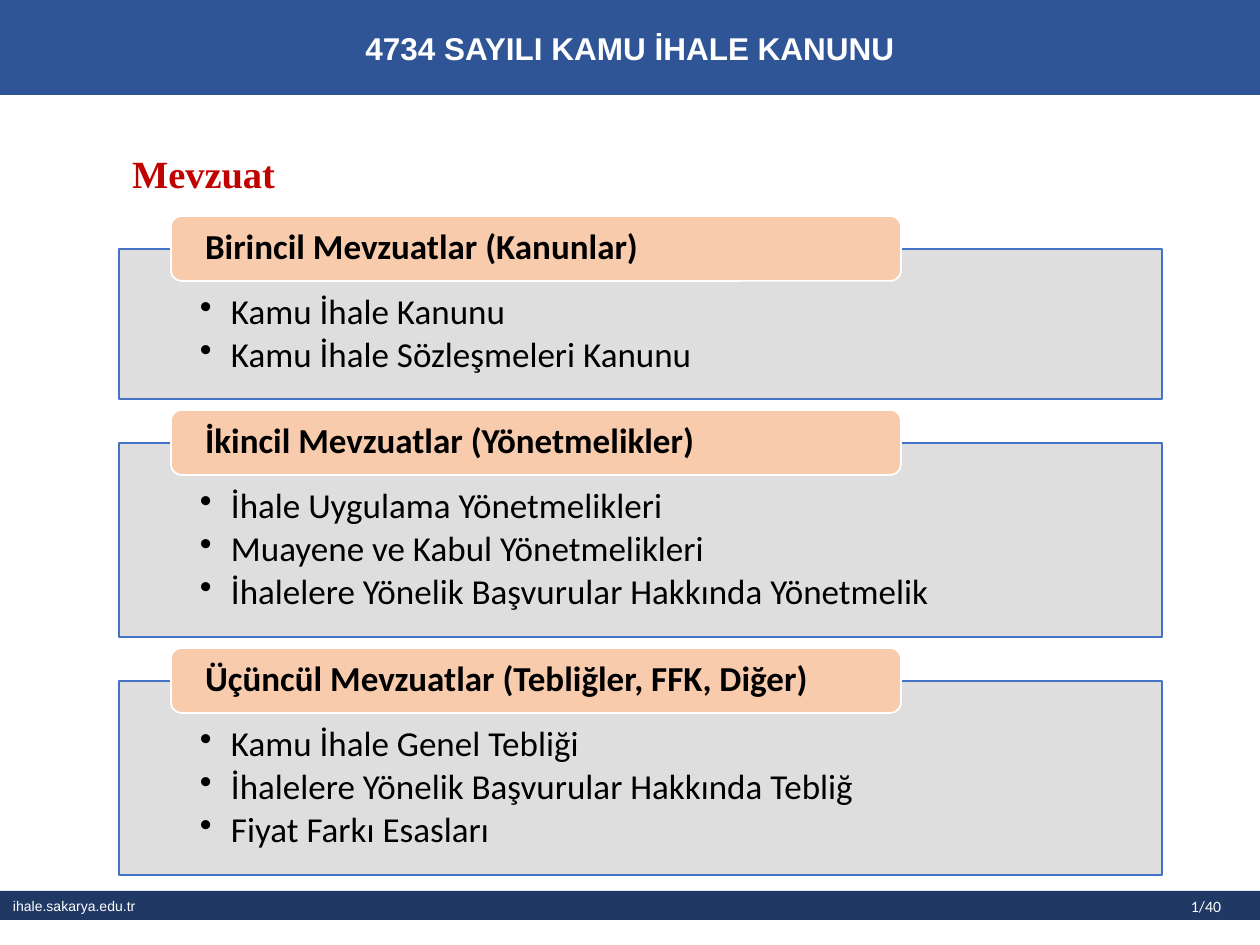
from lxml import etree
from pptx import Presentation
from pptx.dml.color import RGBColor
from pptx.enum.shapes import MSO_SHAPE
from pptx.enum.text import MSO_ANCHOR, PP_ALIGN
from pptx.oxml.ns import qn
from pptx.util import Pt

RECTANGLE = MSO_SHAPE.RECTANGLE
ROUNDED = MSO_SHAPE.ROUNDED_RECTANGLE
TOP, MIDDLE = MSO_ANCHOR.TOP, MSO_ANCHOR.MIDDLE
LEFT, CENTER = PP_ALIGN.LEFT, PP_ALIGN.CENTER

EMU_PER_PX = 914400 / 126
SLIDE_WIDTH, SLIDE_HEIGHT = 1260, 945
DEFAULT_INSETS = (13, 6, 13, 6)
COLORS = {
    "banner": "2F5597",
    "footer": "203864",
    "title": "C00300",
    "panel": "DBDBDB",
    "panel_line": "4472C4",
    "header": "F8CBAD",
    "white": "FFFFFF",
    "black": "000000",
}

SECTIONS = [
    ("Birincil Mevzuatlar (Kanunlar)",
     ["Kamu İhale Kanunu", "Kamu İhale Sözleşmeleri Kanunu"]),
    ("İkincil Mevzuatlar (Yönetmelikler)",
     ["İhale Uygulama Yönetmelikleri",
      "Muayene ve Kabul Yönetmelikleri",
      "İhalelere Yönelik Başvurular Hakkında Yönetmelik"]),
    ("Üçüncül Mevzuatlar (Tebliğler, FFK, Diğer)",
     ["Kamu İhale Genel Tebliği",
      "İhalelere Yönelik Başvurular Hakkında Tebliğ",
      "Fiyat Farkı Esasları"]),
]
SECTION_GAP = 11
HEADER_HEIGHT = 65
HEADER_RISE = 33  # how far a header stands above its panel
PANEL_PADDING = 62
ITEM_HEIGHT = 44


def px(length):
    return round(length * EMU_PER_PX)


def rgb(name):
    return RGBColor.from_string(COLORS[name])


def add_box(slide, kind, box, fill, line=None):
    shape = slide.shapes.add_shape(kind, *map(px, box))
    shape.shadow.inherit = False
    shape.fill.solid()
    shape.fill.fore_color.rgb = rgb(fill)
    if line:
        shape.line.color.rgb = rgb(line)
        shape.line.width = Pt(1)
    else:
        shape.line.fill.background()
    return shape


def set_frame(shape, anchor, insets=DEFAULT_INSETS):
    frame = shape.text_frame
    frame.word_wrap = True
    frame.vertical_anchor = anchor
    (frame.margin_left, frame.margin_top,
     frame.margin_right, frame.margin_bottom) = map(px, insets)
    return frame


def add_run(paragraph, text, font, size, color, bold=False, align=LEFT):
    paragraph.alignment = align
    run = paragraph.add_run()
    run.text = text
    run.font.name = font
    run.font.size = Pt(size)
    run.font.bold = bold
    run.font.color.rgb = rgb(color)


def set_bullet(paragraph, indent):
    properties = paragraph._p.get_or_add_pPr()
    properties.set("marL", str(px(indent)))
    properties.set("indent", str(-px(indent)))
    etree.SubElement(properties, qn("a:buChar"), char="•")


def set_opacity(shape, percent):
    color = shape.fill._xPr.find(".//" + qn("a:srgbClr"))
    etree.SubElement(color, qn("a:alpha"), val=str(percent * 1000))


def add_banner(slide, box):
    frame = set_frame(add_box(slide, RECTANGLE, box, "banner"), MIDDLE)
    add_run(frame.paragraphs[0], "4734 SAYILI KAMU İHALE KANUNU",
            "Arial", 18, "white", bold=True, align=CENTER)


def add_footer(slide, box):
    left, top, width, height = box
    bar = set_frame(add_box(slide, RECTANGLE, box, "footer"), MIDDLE)
    add_run(bar.paragraphs[0], "ihale.sakarya.edu.tr", "Arial", 8, "white")
    number_box = (left + width - 82, top, 82, height)
    number = set_frame(slide.shapes.add_textbox(*map(px, number_box)), TOP)
    add_run(number.paragraphs[0], "1/40", "Calibri", 9, "white")


def add_title(slide, box):
    frame = set_frame(slide.shapes.add_textbox(*map(px, box)), TOP)
    paragraph = frame.paragraphs[0]
    paragraph.line_spacing = 0.9
    add_run(paragraph, "Mevzuat", "Times New Roman", 22, "title", bold=True)


def add_section(slide, box, heading, items):
    """Place a bulleted panel with a header tab overlapping its top edge."""
    left, top, width, height = box
    panel_box = (left, top + HEADER_RISE, width, height - HEADER_RISE)
    panel = add_box(slide, RECTANGLE, panel_box, "panel", "panel_line")
    set_opacity(panel, 90)
    frame = set_frame(panel, TOP, (81, 45, 81, 20))
    for index, item in enumerate(items):
        paragraph = frame.add_paragraph() if index else frame.paragraphs[0]
        paragraph.line_spacing = 0.9
        paragraph.space_after = Pt(3)
        set_bullet(paragraph, 31)
        add_run(paragraph, item, "Calibri", 20, "black")

    header_box = (left + 52, top, round(width * 0.7), HEADER_HEIGHT)
    header = add_box(slide, ROUNDED, header_box, "header", "white")
    paragraph = set_frame(header, MIDDLE, (31, 0, 31, 0)).paragraphs[0]
    paragraph.line_spacing = 0.9
    add_run(paragraph, heading, "Calibri", 20, "black", bold=True)


def add_sections(slide, left, top, width):
    for heading, items in SECTIONS:
        height = HEADER_RISE + PANEL_PADDING + ITEM_HEIGHT * len(items)
        add_section(slide, (left, top, width, height), heading, items)
        top += height + SECTION_GAP


def main():
    presentation = Presentation()
    presentation.slide_width = px(SLIDE_WIDTH)
    presentation.slide_height = px(SLIDE_HEIGHT)
    slide = presentation.slides.add_slide(presentation.slide_layouts[6])
    add_footer(slide, (0, 891, SLIDE_WIDTH, 29))
    add_banner(slide, (0, 0, SLIDE_WIDTH, 95))
    add_title(slide, (119, 149, 1141, 59))
    add_sections(slide, 119, 216, 1043)
    presentation.save("out.pptx")


if __name__ == "__main__":
    main()
